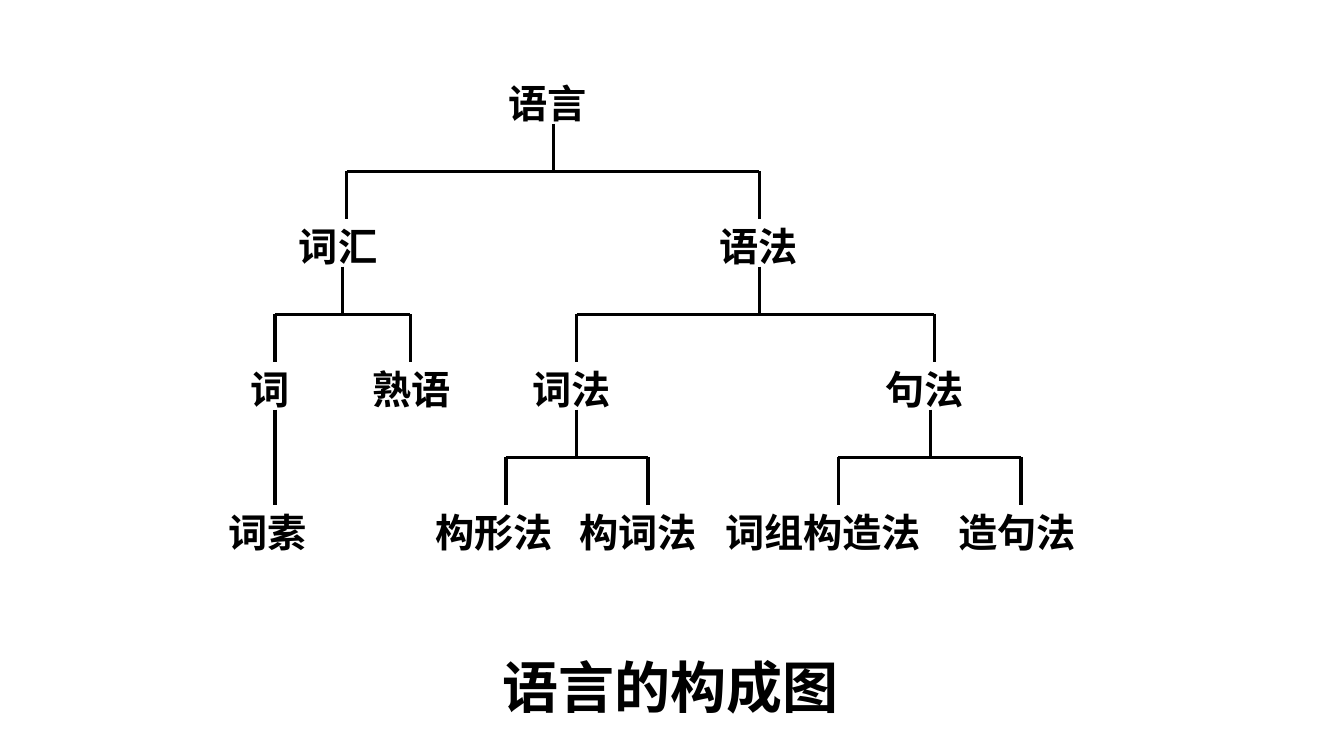
from lxml.etree import SubElement
from pptx import Presentation
from pptx.dml.color import RGBColor
from pptx.enum.lang import MSO_LANGUAGE_ID
from pptx.enum.shapes import MSO_CONNECTOR
from pptx.enum.text import MSO_ANCHOR, MSO_AUTO_SIZE, PP_ALIGN
from pptx.oxml.ns import qn
from pptx.util import Cm, Pt

COLORS = {"ink": "000000", "paper": "FFFFFF"}
TOP, STEP, HIGH, DROP = 2, 3.6, 1.2, 1.2
BAR = 4.32

LABELS = [
    [("语言", 12.8, 2)],
    [("词汇", 7.52, 2), ("语法", 18.11, 2)],
    [("词", 6.3, 1), ("熟语", 9.07, 2.6), ("词法", 13.41, 2), ("句法", 22.3, 2)],
    [("词素", 5.74, 2), ("构形法", 10.95, 3), ("构词法", 14.58, 3),
     ("词组构造法", 18.24, 5), ("造句法", 24.13, 3)],
]
FORKS = [
    (0, 13.94, 8.74, 19.13),
    (1, 8.64, 6.93, 10.34),
    (1, 19.13, 14.53, 23.55),
    (2, 14.53, 12.75, 16.33),
    (2, 23.44, 21.13, 25.73),
]


class Chart:
    """Draws the labels and branches of a tree on one slide."""

    label = {"size": Pt(28), "name": "Arial"}
    title = {"size": Pt(40), "name": "Lato"}
    inset = {"margin_left": 0, "margin_right": 0, "margin_top": 0,
             "margin_bottom": 0, "vertical_anchor": MSO_ANCHOR.MIDDLE}

    def __init__(self, slide):
        self.slide = slide
        fill = slide.background.fill
        fill.solid()
        fill.fore_color.rgb = RGBColor.from_string(COLORS["paper"])

    def text(self, words, left, top, width, height, font, frame):
        box = self.slide.shapes.add_textbox(Cm(left), Cm(top), Cm(width), Cm(height))
        body = box.text_frame
        body.auto_size = MSO_AUTO_SIZE.SHAPE_TO_FIT_TEXT
        for key, value in frame.items():
            setattr(body, key, value)
        para = body.paragraphs[0]
        para.alignment = PP_ALIGN.CENTER
        run = para.add_run()
        run.text = words
        style = {"bold": True, "language_id": MSO_LANGUAGE_ID.SIMPLIFIED_CHINESE}
        for key, value in {**style, **font}.items():
            setattr(run.font, key, value)
        run.font.color.rgb = RGBColor.from_string(COLORS["ink"])

    def node(self, level, words, left, width):
        frame = {**self.inset, "word_wrap": False}
        self.text(words, left, TOP + level * STEP, width, HIGH, self.label, frame)

    def head(self, words, left, top, width, height):
        self.text(words, left, top, width, height, self.title, {"word_wrap": True})

    def line(self, *ends):
        link = self.slide.shapes.add_connector(MSO_CONNECTOR.STRAIGHT, *map(Cm, ends))
        link.line.width = Pt(2.25)
        link.line.color.rgb = RGBColor.from_string(COLORS["ink"])
        SubElement(link.element.spPr, qn("a:effectLst"))

    def fork(self, level, stem, left, right):
        bar = BAR + level * STEP
        self.line(stem, bar - DROP, stem, bar)
        self.line(left, bar, right, bar)
        for leg in (left, right):
            self.line(leg, bar, leg, bar + DROP)


def main():
    deck = Presentation()
    deck.slide_width, deck.slide_height = Cm(33.87), Cm(19.05)
    chart = Chart(deck.slides.add_slide(deck.slide_layouts[6]))
    for level, row in enumerate(LABELS):
        for words, left, width in row:
            chart.node(level, words, left, width)
    for fork in FORKS:
        chart.fork(*fork)
    bar = BAR + 2 * STEP
    chart.line(6.93, bar - DROP, 6.93, bar + DROP)
    chart.head("语言的构成图", 11.48, 16.33, 10.85, 1.96)
    deck.save("out.pptx")


if __name__ == "__main__":
    main()
